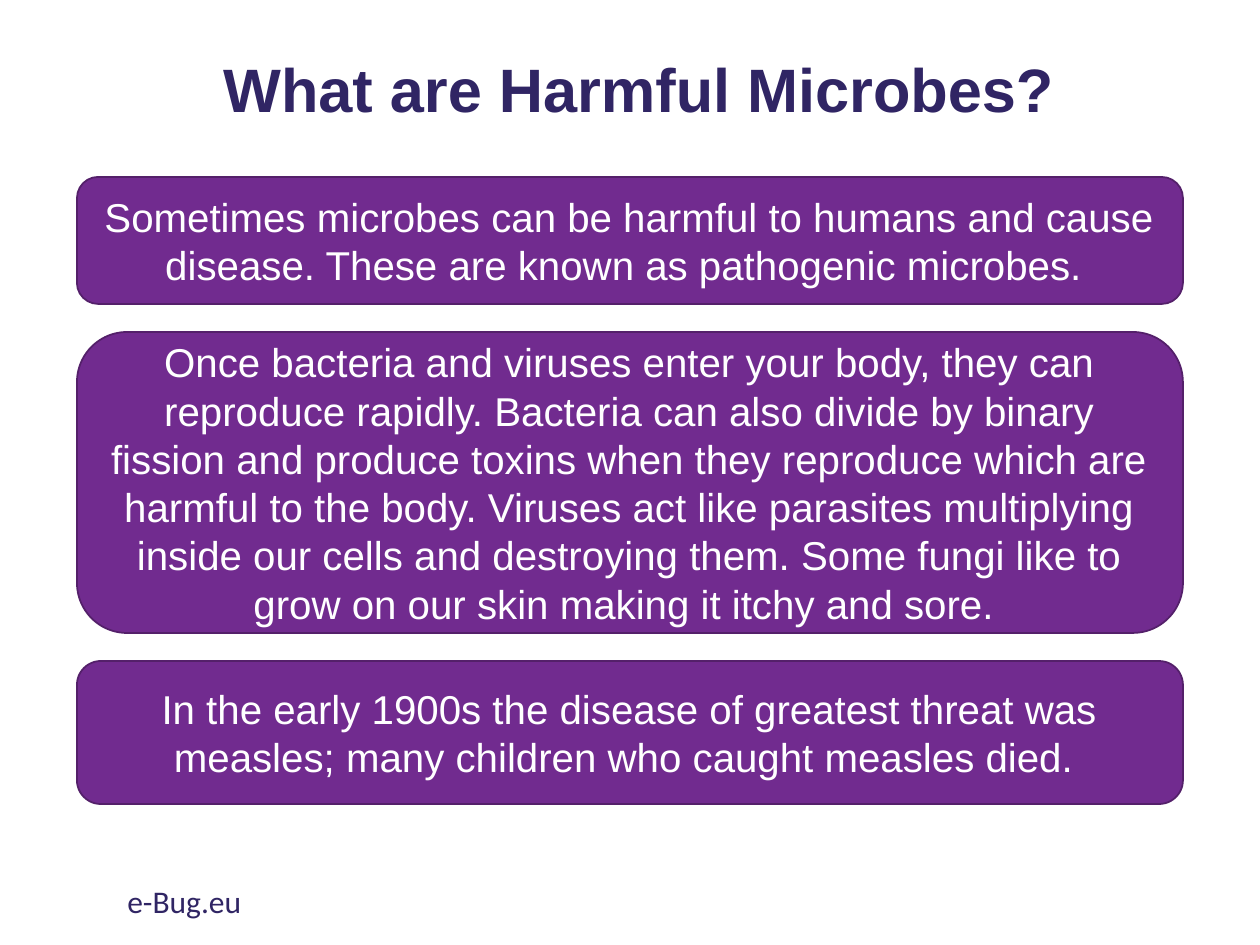
"""Build the slide that explains harmful microbes."""
from pptx import Presentation
from pptx.dml.color import RGBColor
from pptx.enum.shapes import MSO_SHAPE as SHAPE
from pptx.enum.text import MSO_ANCHOR as ANCHOR, PP_ALIGN as ALIGN
from pptx.util import Pt

PX = 914400 / 126
COLORS = {"navy": "302564", "purple": "712B8F", "edge": "54206A", "white": "FFFFFF"}
FACTS = [
    (127, "Sometimes microbes can be harmful to humans and cause disease. "
          "These are known as pathogenic microbes. "),
    (301, "Once bacteria and viruses enter your body, they can reproduce rapidly. "
          "Bacteria can also divide by binary fission and produce toxins when they "
          "reproduce which are harmful to the body. Viruses act like parasites "
          "multiplying inside our cells and destroying them. Some fungi like to grow "
          "on our skin making it itchy and sore. "),
    (143, "In the early 1900s the disease of greatest threat was measles; "
          "many children who caught measles died. "),
]


def px(*lengths):
    return [round(n * PX) for n in lengths]


def color(name):
    return RGBColor.from_string(COLORS[name])


class Deck:
    def __init__(self):
        self.prs = Presentation()
        self.prs.slide_width, self.prs.slide_height = px(1260, 945)
        self.s = self.prs.slides.add_slide(self.prs.slide_layouts[6])

    def set_text(self, sp, text, size, ink, font="Arial", bold=False,
                 align=ALIGN.CENTER, anchor=ANCHOR.MIDDLE):
        tf = sp.text_frame
        tf.word_wrap = True
        tf.vertical_anchor = anchor
        p = tf.paragraphs[0]
        p.text = text
        p.alignment = align
        p.font.name, p.font.size, p.font.bold = font, Pt(size), bold
        p.font.color.rgb = color(ink)
        return p

    def label(self, box, text, size, **style):
        sp = self.s.shapes.add_textbox(*px(*box))
        return self.set_text(sp, text, size, "navy", **style)

    def panel(self, box, text):
        sp = self.s.shapes.add_shape(SHAPE.ROUNDED_RECTANGLE, *px(*box))
        sp.shadow.inherit = False
        sp.fill.solid()
        sp.fill.fore_color.rgb = color("purple")
        sp.line.color.rgb = color("edge")
        sp.line.width = Pt(1)
        self.set_text(sp, text, 23, "white")


def main():
    deck = Deck()
    title = deck.label((96, 35, 1086, 115), "What are Harmful Microbes?", 35, bold=True)
    title.line_spacing = 0.9
    top, gap = 177, 28
    for height, fact in FACTS:
        deck.panel((77, top, 1106, height), fact)
        top += height + gap
    deck.label((115, 876, 426, 50), "e-Bug.eu", 18, font="Calibri",
               align=ALIGN.LEFT, anchor=ANCHOR.TOP)
    deck.prs.save("out.pptx")


if __name__ == "__main__":
    main()
